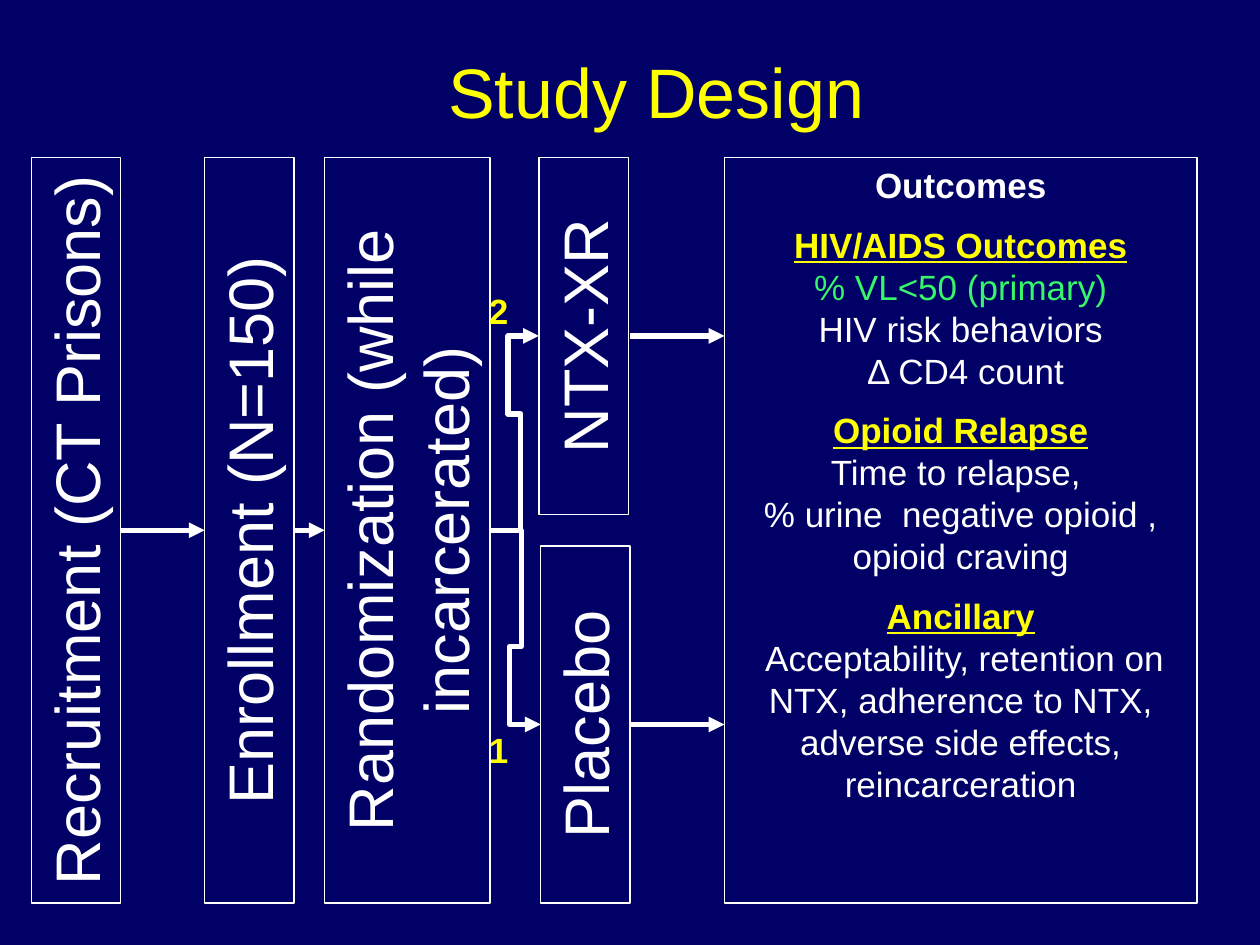
from lxml import etree
from pptx import Presentation
from pptx.dml.color import RGBColor
from pptx.enum.shapes import MSO_CONNECTOR as CONN, MSO_SHAPE as SHAPE
from pptx.enum.text import MSO_ANCHOR as ANCHOR, PP_ALIGN as ALIGN
from pptx.oxml.ns import qn
from pptx.util import Pt

NAVY = RGBColor(0x00, 0x00, 0x66)
WHITE = RGBColor(0xFF, 0xFF, 0xFF)
YELLOW = RGBColor(0xFF, 0xFF, 0x00)
GREEN = RGBColor(0x37, 0xF6, 0x69)
FONT = "Arial"

TOP, HEIGHT = 90, 426
MIDDLE = TOP + HEIGHT / 2
ARM_HEIGHT = 204
STAGES = [
    ("Recruitment (CT Prisons)", 18, 51),
    ("Enrollment (N=150)", 117, 51),
    ("Randomization (while incarcerated)", 185.5, 94.5),
]
ARMS = [
    ("NTX-XR", 308, TOP, "2", 162, (63100, 59800, 36900)),
    ("Placebo", 309, 312, "1", 412.5, (61400, 59800, 38600)),
]
PANEL = (414, TOP, 270, HEIGHT)
OUTCOMES = [
    ("HIV/AIDS Outcomes", [
        ("% VL<50 (primary)", GREEN),
        ("HIV risk behaviors", WHITE),
        (" Δ CD4 count", WHITE),
    ]),
    ("Opioid Relapse", [
        ("Time to relapse, ", WHITE),
        ("% urine  negative opioid , opioid craving", WHITE),
    ]),
    ("Ancillary", [
        (" Acceptability, retention on NTX, adherence to NTX, "
         "adverse side effects, reincarceration", WHITE),
    ]),
]


def style(font, size, color, bold=False):
    font.name = FONT
    font.size = Pt(size)
    font.color.rgb = color
    font.bold = bold


def set_text(sp, text, size, color, bold=False):
    tf = sp.text_frame
    tf.word_wrap = True
    tf.vertical_anchor = ANCHOR.TOP
    p = tf.paragraphs[0]
    p.text = text
    p.alignment = ALIGN.CENTER
    style(p.font, size, color, bold)
    return tf


def add_frame(slide, left, top, width, height):
    sp = slide.shapes.add_shape(
        SHAPE.RECTANGLE, Pt(left), Pt(top), Pt(width), Pt(height))
    sp.shadow.inherit = False
    sp.fill.background()
    sp.line.color.rgb = WHITE
    sp.line.width = Pt(0.75)
    return sp


def add_vertical_box(slide, text, left, top, width, height):
    shift = (width - height) / 2
    sp = add_frame(slide, left + shift, top - shift, height, width)
    sp.rotation = 270
    set_text(sp, text, 36, WHITE)
    return sp


def add_arrow(slide, kind, x1, y1, x2, y2):
    c = slide.shapes.add_connector(kind, Pt(x1), Pt(y1), Pt(x2), Pt(y2))
    c.line.color.rgb = WHITE
    c.line.width = Pt(3)
    etree.SubElement(c.line._get_or_add_ln(), qn("a:tailEnd"), type="triangle")
    etree.SubElement(c._element.spPr, qn("a:effectLst"))
    return c


def add_straight(slide, x1, x2, y, source, target=None):
    c = add_arrow(slide, CONN.STRAIGHT, x1, y, x2, y)
    c.begin_connect(source, 2)
    if target is not None:
        c.end_connect(target, 0)
    c.begin_x, c.begin_y, c.end_x, c.end_y = Pt(x1), Pt(y), Pt(x2), Pt(y)


def add_branch(slide, x1, y1, x2, y2, adjusts):
    geom = add_arrow(slide, CONN.ELBOW, x1, y1, x2, y2)._element.spPr.find(qn("a:prstGeom"))
    geom.set("prst", "bentConnector5")
    guides = geom.find(qn("a:avLst"))
    for n, value in enumerate(adjusts, 1):
        etree.SubElement(guides, qn("a:gd"), name=f"adj{n}", fmla=f"val {value}")


def add_title(slide, left, top, width, height):
    title = slide.shapes.title
    title.left, title.top, title.width, title.height = map(Pt, (left, top, width, height))
    set_text(title, "Study Design", 40, YELLOW)


def add_stages(slide, top, height):
    boxes = [add_vertical_box(slide, text, left, top, width, height)
             for text, left, width in STAGES]
    for i, (_, left, width) in enumerate(STAGES[:-1]):
        add_straight(slide, left + width, STAGES[i + 1][1], top + height / 2,
                     boxes[i], boxes[i + 1])


def add_arms(slide, start_x, start_y, panel_x):
    for name, left, top, ratio, label_top, adjusts in ARMS:
        box = add_vertical_box(slide, name, left, top, 51, ARM_HEIGHT)
        mid = top + ARM_HEIGHT / 2
        add_branch(slide, start_x, start_y, left, mid, adjusts)
        add_straight(slide, 360, panel_x, mid, box)
        label = slide.shapes.add_textbox(Pt(270), Pt(label_top), Pt(30), Pt(31))
        set_text(label, ratio, 20, YELLOW, True)


def add_outcomes(slide, left, top, width, height):
    add_frame(slide, left, top, width, height)
    box = slide.shapes.add_textbox(Pt(left), Pt(top), Pt(width), Pt(383))
    tf = set_text(box, "Outcomes", 20, WHITE, True)
    for heading, lines in OUTCOMES:
        p = tf.add_paragraph()
        p.alignment = ALIGN.CENTER
        p.space_before = Pt(10)
        r = p.add_run()
        r.text = heading
        style(r.font, 20, YELLOW, True)
        r.font.underline = True
        for text, color in lines:
            p.add_line_break()
            r = p.add_run()
            r.text = text
            style(r.font, 20, color)
        style(p.font, 20, WHITE)


def main():
    prs = Presentation()
    prs.slide_width, prs.slide_height = Pt(720), Pt(540)
    slide = prs.slides.add_slide(prs.slide_layouts[5])
    slide.background.fill.solid()
    slide.background.fill.fore_color.rgb = NAVY
    add_title(slide, 204, 24, 342, 55)
    add_stages(slide, TOP, HEIGHT)
    add_arms(slide, 280, MIDDLE, PANEL[0])
    add_outcomes(slide, *PANEL)
    prs.save("out.pptx")


if __name__ == "__main__":
    main()
